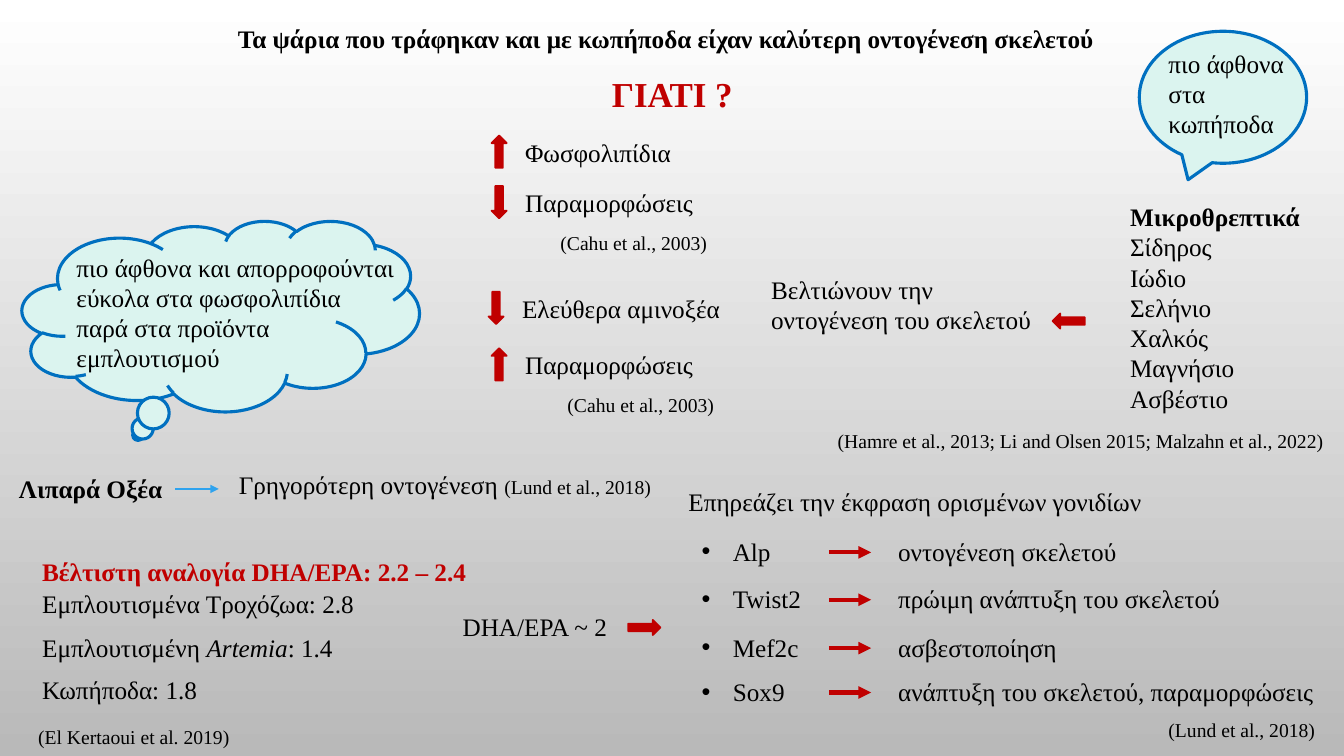
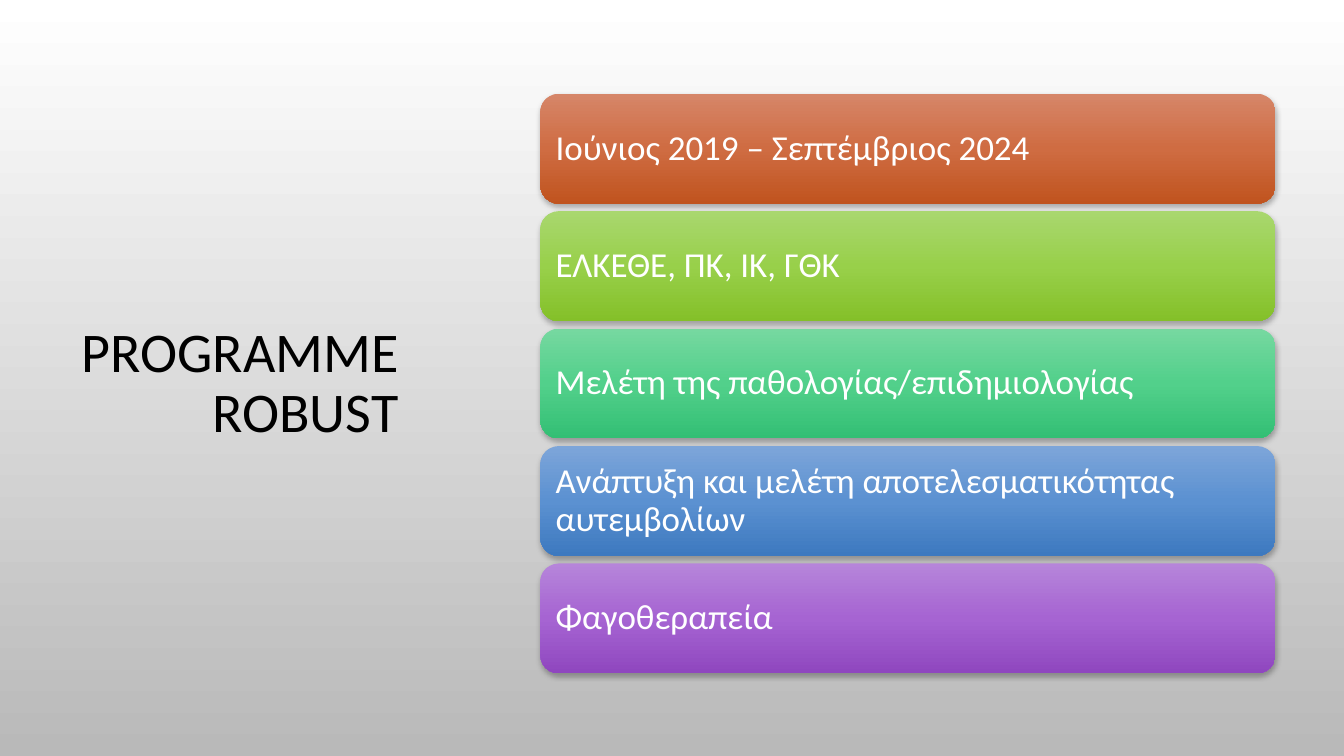
import copy

import pptx
import pptx.dml.color
import pptx.enum.shapes
import pptx.enum.text
import pptx.oxml
import pptx.oxml.ns
import pptx.util

Inches = pptx.util.Inches
Pt = pptx.util.Pt
SHAPE = pptx.enum.shapes.MSO_SHAPE
ANCHOR = pptx.enum.text.MSO_ANCHOR
ALIGN = pptx.enum.text.PP_ALIGN
qn = pptx.oxml.ns.qn
NS = pptx.oxml.ns.nsdecls("a")

# Shared style
SERIF, SANS = "Times New Roman", "Calibri"
BLACK, WHITE, RED = "000000", "FFFFFF", "C00000"
BLUE, SKY, MINT = "0070C0", "2FA3EE", "DBF4EF"
BACKGROUND = [WHITE, "B9B9B9"]
BODY = {"size": Pt(18), "name": SERIF, "color": BLACK}
BOLD = {**BODY, "bold": True}
KEY = {**BOLD, "color": RED}
CITE = {**BODY, "size": Pt(14)}
CARD = {"size": Pt(25), "name": SANS, "color": WHITE}
TITLE = {"size": Pt(40), "name": SANS, "color": BLACK}
UP, DOWN, LEFT, RIGHT = 270, 90, 180, 0


def rgb(color):
    return pptx.dml.color.RGBColor.from_string(color)


def box(*lengths):
    return [Inches(n) for n in lengths]


def set_gradient(fill, element, colors):
    """Spread the colours evenly from top to bottom."""
    fill.gradient()
    stops = element.find(".//" + qn("a:gsLst"))
    while len(stops) < len(colors):
        stops.append(copy.deepcopy(stops[0]))
    for i, (stop, color) in enumerate(zip(fill.gradient_stops, colors)):
        stop.color.rgb = rgb(color)
        stop.position = i / (len(colors) - 1)
    fill.gradient_angle = 270


def add_slide(prs):
    s = prs.slides.add_slide(prs.slide_layouts[6])
    set_gradient(s.background.fill, s.element, BACKGROUND)
    return s


def add_run(p, text, fmt):
    r = p.add_run()
    r.text = text
    for key, value in fmt.items():
        if key == "color":
            r.font.color.rgb = rgb(value)
        else:
            setattr(r.font, key, value)


def add_text(s, at, *runs, wrap=True):
    """Add a text box whose first paragraph holds (text, format) runs."""
    sp = s.shapes.add_textbox(*box(*at))
    tf = sp.text_frame
    tf.word_wrap = wrap
    for text, fmt in runs:
        add_run(tf.paragraphs[0], text, fmt)
    return tf


def add_bullet(p, indent):
    pPr = p._p.get_or_add_pPr()
    pPr.set("marL", str(Inches(indent)))
    pPr.set("indent", str(-Inches(indent)))
    pPr.append(pptx.oxml.parse_xml(f'<a:buFont {NS} typeface="Arial"/>'))
    pPr.append(pptx.oxml.parse_xml(f'<a:buChar {NS} char="•"/>'))


def add_filled(s, kind, at, fill, line, width):
    sp = s.shapes.add_shape(kind, *box(*at))
    sp.shadow.inherit = False
    sp.fill.solid()
    sp.fill.fore_color.rgb = rgb(fill)
    sp.line.color.rgb = rgb(line)
    sp.line.width = Pt(width)
    return sp


def add_block_arrow(s, x, y, direction):
    sp = add_filled(s, SHAPE.RIGHT_ARROW, (x, y, 0.32, 0.15), RED, RED, 1.25)
    sp.rotation = direction


def add_arrow(s, x1, x2, y, color, width):
    c = s.shapes.add_connector(
        pptx.enum.shapes.MSO_CONNECTOR.STRAIGHT, *box(x1, y, x2, y))
    c.line.color.rgb = rgb(color)
    c.line.width = Pt(width)
    c.line._get_or_add_ln().append(
        pptx.oxml.parse_xml(f'<a:tailEnd {NS} type="triangle"/>'))
    c._element.spPr.append(pptx.oxml.parse_xml(f"<a:effectLst {NS}/>"))


def add_callout(s, kind, at, text_at, text):
    add_filled(s, kind, at, MINT, BLUE, 2.25)
    add_text(s, text_at, (text, BODY))


def add_card(s, at, text, colors):
    sp = s.shapes.add_shape(SHAPE.ROUNDED_RECTANGLE, *box(*at))
    set_gradient(sp.fill, sp.element, colors)
    sp.line.fill.background()
    sp.shadow.inherit = False
    sp.element.spPr.find(qn("a:effectLst")).append(pptx.oxml.parse_xml(
        f'<a:outerShdw {NS} blurRad="{Pt(4)}" dist="{Pt(2)}" dir="5400000" '
        'rotWithShape="0"><a:srgbClr val="000000"><a:alpha val="28000"/>'
        '</a:srgbClr></a:outerShdw>'))
    tf = sp.text_frame
    tf.word_wrap = True
    tf.vertical_anchor = ANCHOR.MIDDLE
    p = tf.paragraphs[0]
    p.alignment = ALIGN.LEFT
    p.line_spacing = 0.9
    add_run(p, text, CARD)


def build_reasons(prs):
    s = add_slide(prs)

    # Headings
    add_text(s, (2.26, 0.18, 8.81, 0.4), (
        "Τα ψάρια που τράφηκαν και με κωπήποδα είχαν καλύτερη "
        "οντογένεση σκελετού", BOLD))
    add_text(s, (5.97, 0.67, 1.42, 0.52),
             ("ΓΙΑΤΙ ?", {**KEY, "size": Pt(25)}))

    # Callouts
    add_callout(s, SHAPE.CLOUD_CALLOUT, (0.22, 2.19, 3.94, 1.89),
                (0.66, 2.45, 3.39, 1.31),
                "πιο άφθονα και απορροφούνται εύκολα στα φωσφολιπίδια "
                "παρά στα προϊόντα εμπλουτισμού")
    add_callout(s, SHAPE.OVAL_CALLOUT, (11.3, 0.31, 1.66, 1.31),
                (11.49, 0.43, 1.42, 1.01), "πιο άφθονα στα κωπήποδα")

    # Rises and falls
    for x, y, width, direction, text in [
        (5.11, 1.31, 1.66, UP, "Φωσφολιπίδια"),
        (5.11, 1.81, 1.88, DOWN, "Παραμορφώσεις"),
        (5.08, 2.86, 2.18, DOWN, "Ελεύθερα αμινοξέα"),
        (5.11, 3.42, 1.88, UP, "Παραμορφώσεις"),
    ]:
        add_text(s, (x, y, width, 0.4), (text, BODY), wrap=False)
        add_block_arrow(s, x - 0.32, y + 0.12, direction)

    # Micronutrients
    tf = add_text(s, (11.11, 1.95, 1.98, 2.52), ("Μικροθρεπτικά", BOLD))
    for name in ["Σίδηρος", "Ιώδιο", "Σελήνιο", "Χαλκός", "Μαγνήσιο",
                 "Ασβέστιο"]:
        add_run(tf.add_paragraph(), name, BODY)
    add_block_arrow(s, 10.44, 3.11, LEFT)
    add_text(s, (7.55, 2.67, 2.88, 1.18),
             ("Βελτιώνουν την οντογένεση του σκελετού", BODY))

    # Fatty acids
    add_text(s, (0.09, 4.65, 1.63, 0.4), ("Λιπαρά Οξέα", BOLD))
    add_arrow(s, 1.74, 2.17, 4.85, SKY, 1.25)
    add_text(s, (2.27, 4.61, 4.4, 0.4), ("Γρηγορότερη οντογένεση ", BODY),
             ("(Lund et al., 2018)", CITE))

    # DHA/EPA ratios
    for y, runs in [
        (5.47, [("Βέλτιστη αναλογία DHA/EPA: 2.2 – 2.4", KEY)]),
        (5.79, [("Εμπλουτισμένα Τροχόζωα: 2.8", BODY)]),
        (6.22, [("Εμπλουτισμένη ", BODY),
                ("Artemia", {**BODY, "italic": True}), (": 1.4", BODY)]),
        (6.64, [("Κωπήποδα: 1.8", BODY)]),
    ]:
        add_text(s, (0.32, y, 4.6, 0.4), *runs)
    add_text(s, (4.49, 6.02, 1.73, 0.4), ("DHA/EPA ~ 2", BODY))
    add_block_arrow(s, 6.23, 6.15, RIGHT)

    # Genes and their effects
    add_text(s, (6.73, 4.78, 6.5, 0.4),
             ("Επηρεάζει την έκφραση ορισμένων γονιδίων", BODY))
    for y, gene, effect in [
        (5.27, "Alp", "οντογένεση σκελετού"),
        (5.74, "Twist2", "πρώιμη ανάπτυξη του σκελετού"),
        (6.22, "Mef2c", "ασβεστοποίηση"),
        (6.66, "Sox9", "ανάπτυξη του σκελετού, παραμορφώσεις"),
    ]:
        tf = add_text(s, (6.86, y, 1.29, 0.4), (gene, BODY))
        add_bullet(tf.paragraphs[0], 0.31)
        add_arrow(s, 8.22, 8.64, y + 0.21, RED, 3)
        add_text(s, (8.81, y, 4.5, 0.4), (effect, BODY))

    # Citations
    for x, y, width, text in [
        (5.46, 2.24, 1.67, "(Cahu et al., 2003)"),
        (5.53, 3.85, 1.67, "(Cahu et al., 2003)"),
        (8.21, 4.21, 5.04,
         "(Hamre et al., 2013; Li and Olsen 2015; Malzahn et al., 2022)"),
        (0.28, 7.14, 2.18, "(El Kertaoui et al. 2019)"),
        (11.49, 7.07, 1.71, "(Lund et al., 2018)"),
    ]:
        add_text(s, (x, y, width, 0.34), (text, CITE), wrap=False)


def build_programme(prs):
    s = add_slide(prs)

    # Title
    tf = add_text(s, (0.64, 1.84, 3.41, 2.62), ("PROGRAMME ROBUST", TITLE))
    tf.vertical_anchor = ANCHOR.BOTTOM
    tf.paragraphs[0].alignment = ALIGN.RIGHT
    tf.paragraphs[0].line_spacing = 0.9

    # Cards, evenly spaced
    cards = [
        ("Ιούνιος 2019 – Σεπτέμβριος 2024", ["D68669", "CF6C42", "C0541F"]),
        ("ΕΛΚΕΘΕ, ΠΚ, ΙΚ, ΓΘΚ", ["A9D76F", "98D04A", "84C029"]),
        ("Μελέτη της παθολογίας/επιδημιολογίας",
         ["76D8A0", "52D08B", "33BF74"]),
        ("Ανάπτυξη και μελέτη αποτελεσματικότητας αυτεμβολίων",
         ["7DA5D9", "5B91D1", "3D79BF"]),
        ("Φαγοθεραπεία", ["B685DA", "A664D2", "8F47BF"]),
    ]
    top, bottom, height = 0.93, 6.68, 1.09
    pitch = (bottom - top - height) / (len(cards) - 1)
    for i, (text, colors) in enumerate(cards):
        add_card(s, (5.36, top + i * pitch, 7.29, height), text, colors)


def main():
    prs = pptx.Presentation()
    prs.slide_width, prs.slide_height = box(13.33, 7.5)
    build_reasons(prs)
    build_programme(prs)
    prs.save("out.pptx")


if __name__ == "__main__":
    main()
